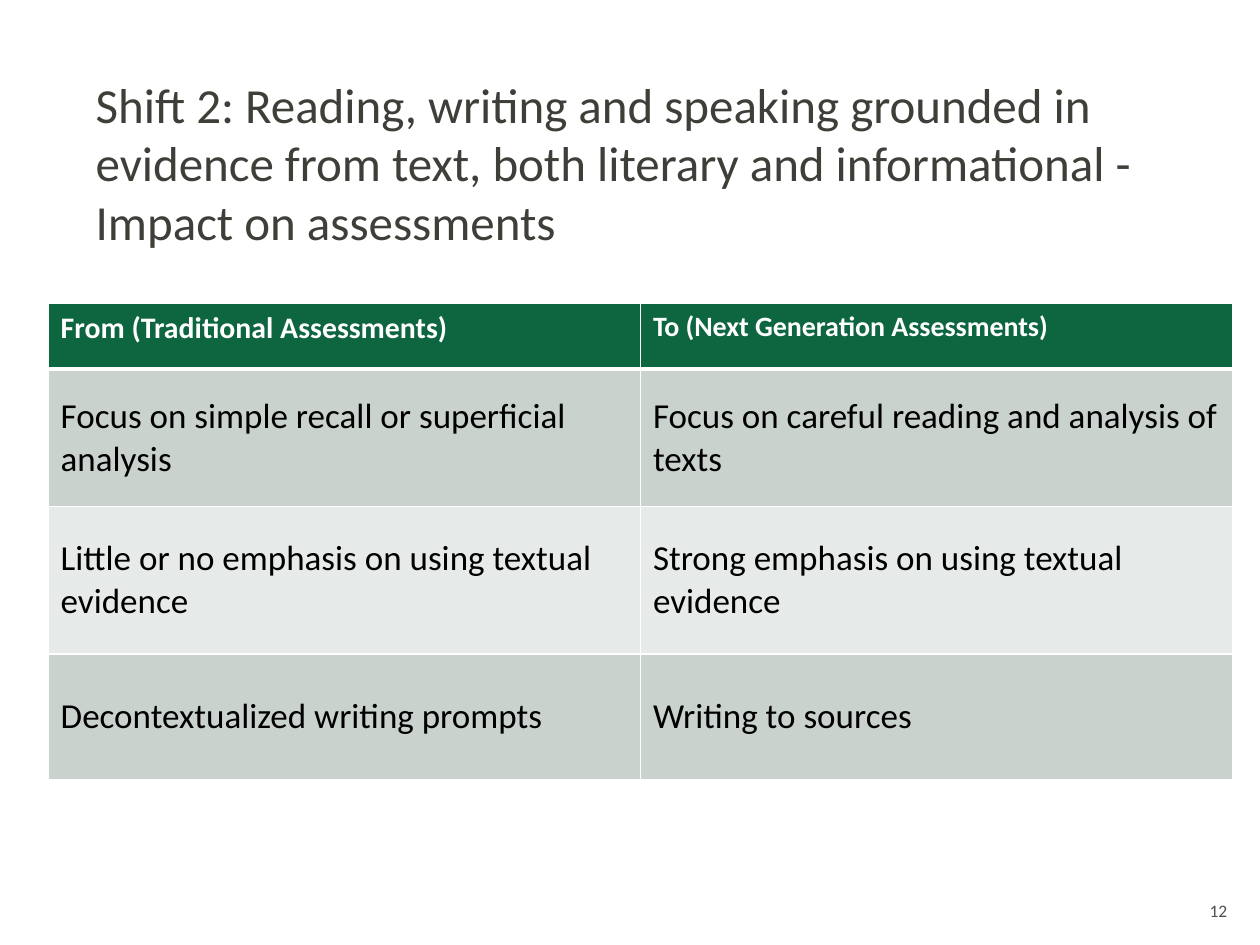
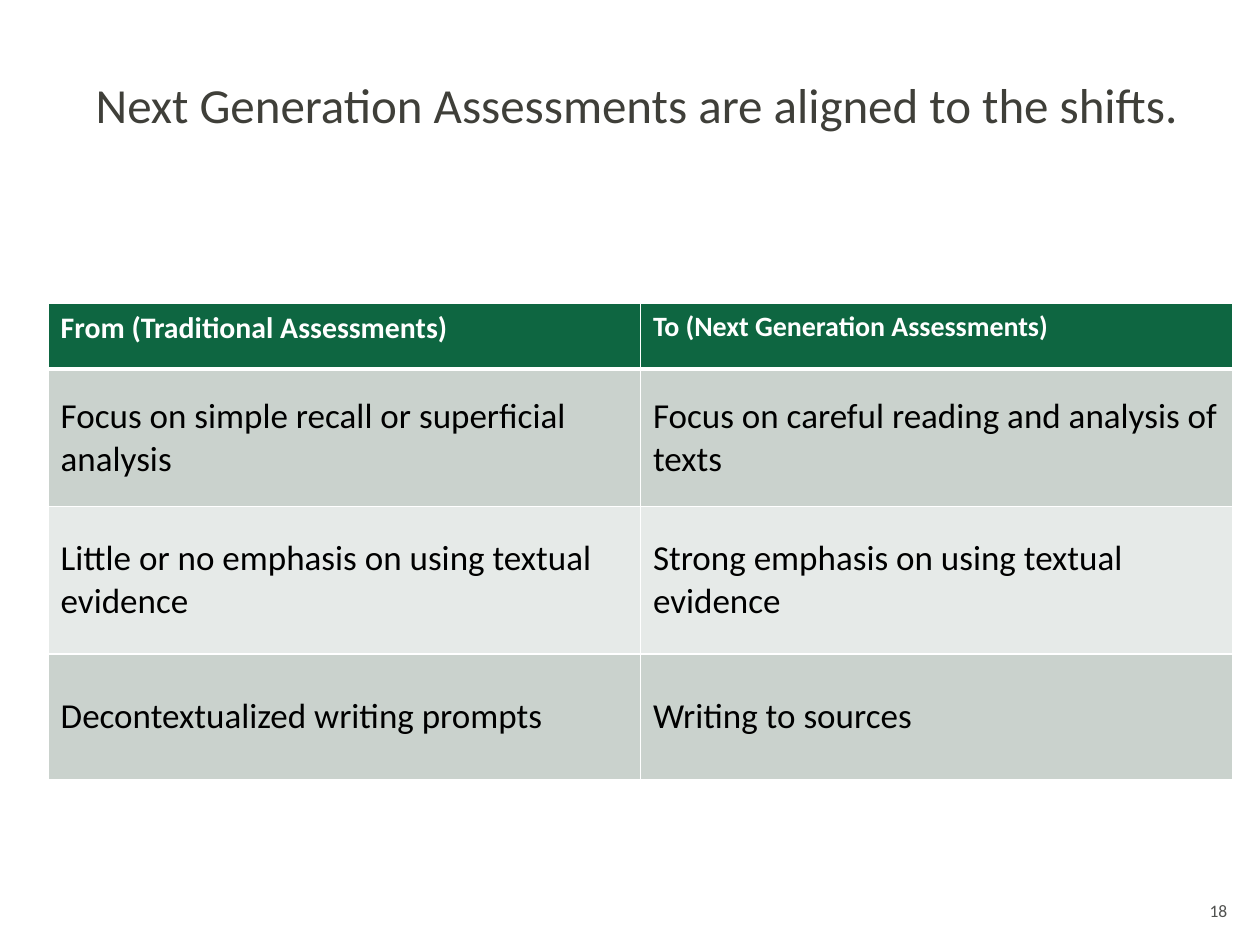
from lxml import etree
from pptx import Presentation
from pptx.dml.color import RGBColor
from pptx.enum import text
from pptx.oxml import ns
from pptx.util import Cm, Pt

FONT = "Calibri"
WHITE = RGBColor(0xFF, 0xFF, 0xFF)
BLACK = RGBColor(0, 0, 0)
TITLE_GREY = RGBColor(0x3F, 0x3F, 0x39)
NUMBER_GREY = RGBColor(0x50, 0x51, 0x4F)
HEADER_GREEN = RGBColor(0x0E, 0x66, 0x41)
BANDS = (RGBColor(0xCA, 0xD2, 0xCD), RGBColor(0xE6, 0xEA, 0xE8))

TITLE_BOX = (Cm(1.68), Cm(1.37), Cm(22.86), Cm(3.18))
NUMBER_BOX = (Cm(21.03), Cm(18.01), Cm(3.96), Cm(0.69))
TABLE_BOX = (Cm(0.97), Cm(6.12), Cm(23.88), Cm(9.6))
ROW_HEIGHTS = (Cm(1.32), Cm(2.77), Cm(2.97), Cm(2.54))

HEADERS = (("From (Traditional Assessments)", 17),
           ("To (Next Generation Assessments)", 16))
CHANGES = (
    ("Focus on simple recall or superficial analysis",
     "Focus on careful reading and analysis of texts"),
    ("Little or no emphasis on using textual evidence",
     "Strong emphasis on using textual evidence"),
    ("Decontextualized writing prompts", "Writing to sources"),
)
SLIDES = (
    ("Shift 2: Reading, writing and speaking grounded in evidence from text, "
     "both literary and informational - Impact on assessments", 12),
    ("Next Generation Assessments are aligned to the shifts.", 18),
)


def style(paragraph, size, color, bold=False):
    """Set the font of a whole paragraph."""
    font = paragraph.font
    font.name, font.size, font.bold = FONT, Pt(size), bold
    font.color.rgb = color


def add_line_of_text(slide, box, wording, size, color,
                     align=text.PP_ALIGN.LEFT):
    """Place one wrapped paragraph in the given box."""
    frame = slide.shapes.add_textbox(*box).text_frame
    frame.word_wrap = True
    paragraph = frame.paragraphs[0]
    paragraph.text, paragraph.alignment = wording, align
    style(paragraph, size, color)


def add_borders(cell, top, bottom):
    """Draw white cell borders, with top and bottom widths in points."""
    properties = cell._tc.get_or_add_tcPr()
    for side, width in (("L", 1), ("R", 1), ("T", top), ("B", bottom)):
        line = etree.SubElement(properties, ns.qn(f"a:ln{side}"),
                                w=str(Pt(width)))
        fill = etree.SubElement(line, ns.qn("a:solidFill"))
        etree.SubElement(fill, ns.qn("a:srgbClr"), val=str(WHITE))


def fill_cell(cell, wording, size, color, background, top=1, bottom=1,
              bold=False):
    """Write and colour one table cell."""
    cell.text = wording
    style(cell.text_frame.paragraphs[0], size, color, bold)
    add_borders(cell, top, bottom)
    cell.fill.solid()
    cell.fill.fore_color.rgb = background


def add_comparison(slide, box):
    """Place the table of traditional and next generation assessments."""
    table = slide.shapes.add_table(len(ROW_HEIGHTS), len(HEADERS), *box).table
    for row, height in zip(table.rows, ROW_HEIGHTS):
        row.height = height
    for column, (header, size) in enumerate(HEADERS):
        fill_cell(table.cell(0, column), header, size, WHITE, HEADER_GREEN,
                  bottom=3, bold=True)
    for row, change in enumerate(CHANGES, start=1):
        for column, wording in enumerate(change):
            cell = table.cell(row, column)
            fill_cell(cell, wording, 20, BLACK, BANDS[(row - 1) % 2],
                      top=3 if row == 1 else 1)
            cell.vertical_anchor = text.MSO_ANCHOR.MIDDLE


def add_assessment_slide(deck, title, number):
    """Build one slide with title, comparison table and page number."""
    slide = deck.slides.add_slide(deck.slide_layouts[6])
    add_line_of_text(slide, NUMBER_BOX, str(number), 10, NUMBER_GREY,
                     text.PP_ALIGN.RIGHT)
    add_line_of_text(slide, TITLE_BOX, title, 28, TITLE_GREY)
    add_comparison(slide, TABLE_BOX)


def main():
    """Build and save the deck."""
    deck = Presentation()
    deck.slide_width, deck.slide_height = Cm(25.4), Cm(19.05)
    for title, number in SLIDES:
        add_assessment_slide(deck, title, number)
    deck.save("out.pptx")


if __name__ == "__main__":
    main()
